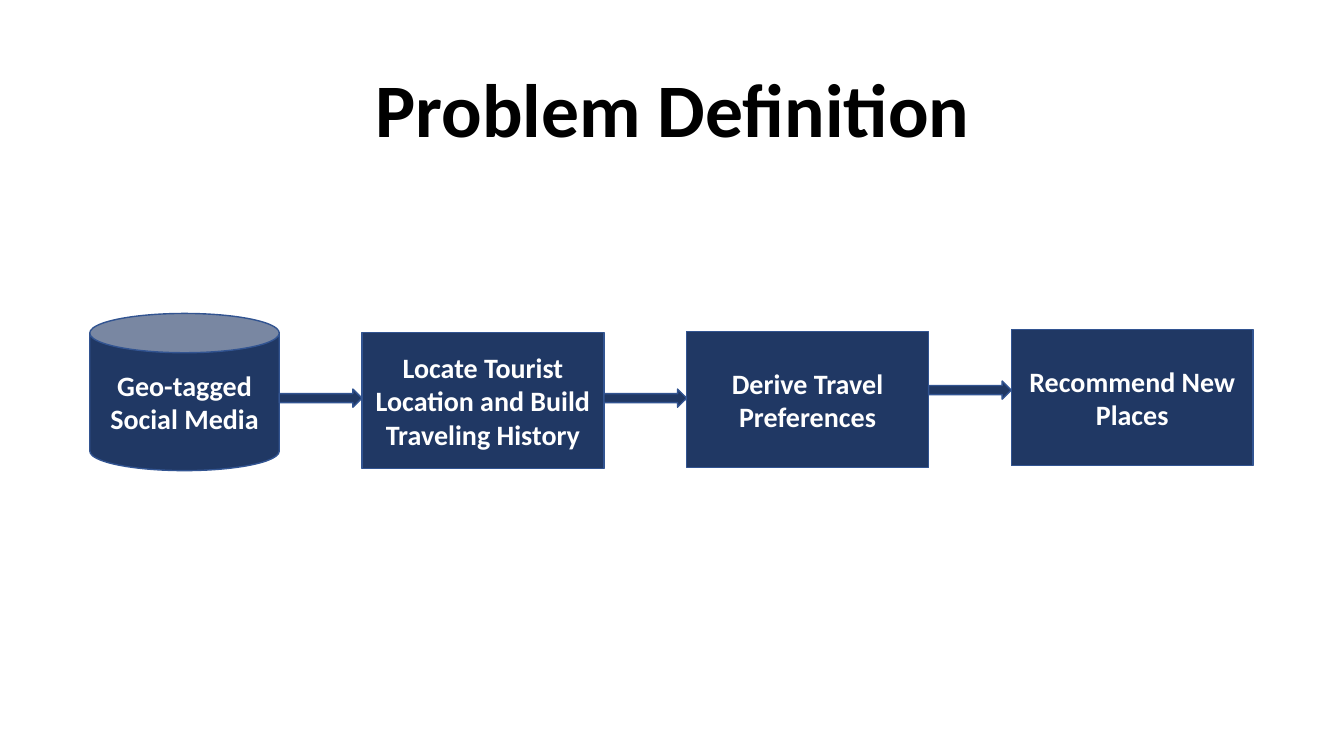
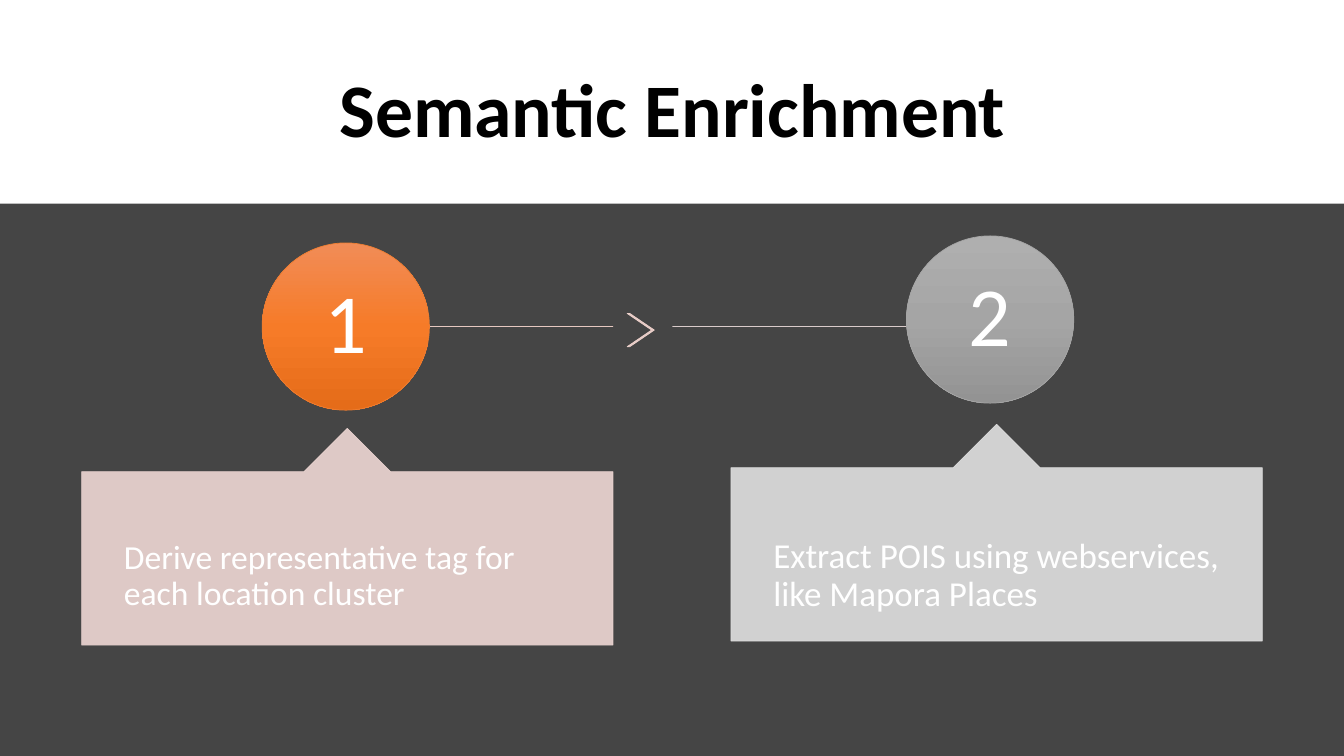
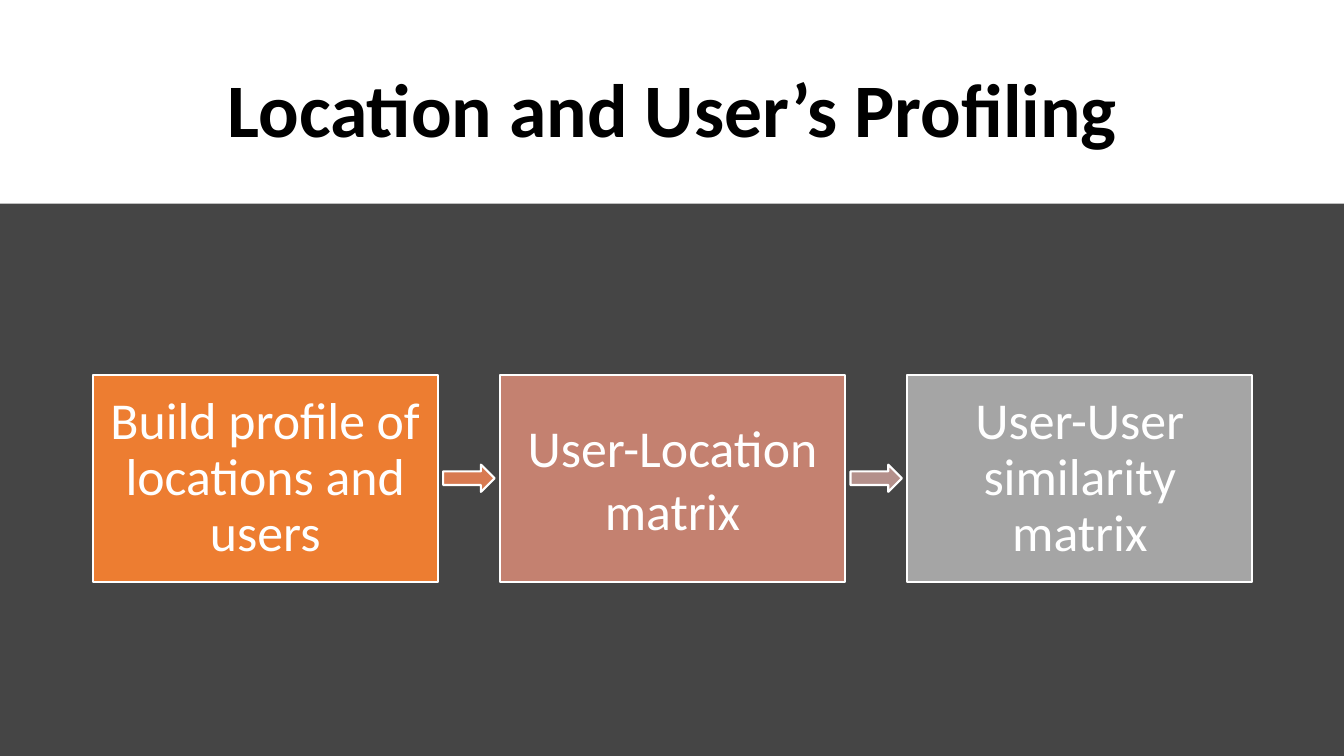
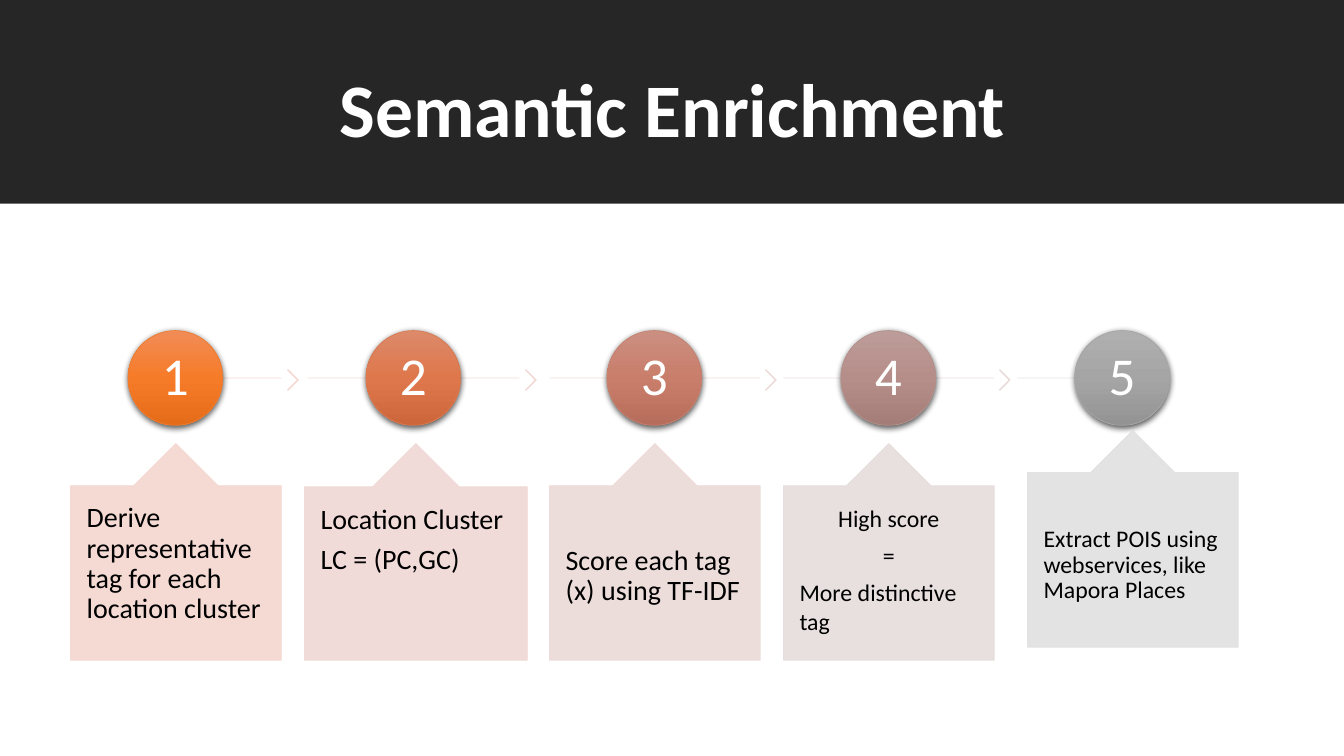
import copy
from dataclasses import dataclass

import pptx
import pptx.dml.color
import pptx.enum.shapes
import pptx.enum.text
import pptx.oxml
import pptx.oxml.ns
import pptx.util
from lxml import etree

Inches = pptx.util.Inches
Pt = pptx.util.Pt
RGB = pptx.dml.color.RGBColor.from_string
SHAPE = pptx.enum.shapes.MSO_SHAPE
ALIGN = pptx.enum.text.PP_ALIGN
ANCHOR = pptx.enum.text.MSO_ANCHOR
qn = pptx.oxml.ns.qn


@dataclass(frozen=True)
class Theme:
    font: str = "Calibri"
    white: str = "FFFFFF"
    black: str = "000000"
    dark: str = "454545"
    band: str = "262626"
    navy: str = "203864"
    navy_line: str = "325491"
    title_size: int = 54
    flow_size: int = 20
    matrix_size: int = 37
    step_alpha: int = 90


T = Theme()

BALLS = {
    "orange": ("ED7D31", ("F18C57", "F67B28", "E56C19")),
    "rust": ("D87A51", ("DD8A6A", "DE774B", "CD673B")),
    "rose": ("C48170", ("CB8F81", "C97E6B", "B76D5B")),
    "mauve": ("B4908B", ("BC9C99", "B68E89", "A47C78")),
    "grey": ("A5A5A5", ("AFAFAF", "A5A5A5", "939393")),
}

FLOW = [
    ("Geo-tagged Social Media", SHAPE.CAN, (0.89, 3.11, 1.88, 1.56), None),
    ("Locate Tourist Location and Build Traveling History", SHAPE.RECTANGLE,
     (3.59, 3.3, 2.4, 1.35), 3.86),
    ("Derive Travel Preferences", SHAPE.RECTANGLE, (6.81, 3.29, 2.4, 1.35), 3.86),
    ("Recommend New Places", SHAPE.RECTANGLE, (10.03, 3.27, 2.4, 1.35), 3.78),
]

MATRICES = [
    ("Build profile of locations and users", "ED7D31", 0.9, "D87A51"),
    ("User-Location matrix", "C48170", 1.0, "B4908B"),
    ("User-User similarity matrix", "A5A5A5", 0.9, None),
]

TAG_TEXT = "Derive representative tag for each location cluster"
POI_TEXT = "Extract POIS using webservices, like Mapora Places"

TWO_STEPS = {
    "ball": 1.66, "number_size": 60, "side": 0.42, "color": T.white,
    "shadow": False, "line_y": 3.24, "chevron": (3.11, 0.27, 0.33),
    "lines": [(3.74, 6.08, "F8D7CE"), (6.67, 9.31, "EADAD9")],
    "chevrons": [(6.22, "F4D7D1")],
    "steps": [
        {"hue": "orange", "ball": (2.6, 2.41), "box": (0.81, 4.25, 5.27),
         "fill": "EFD8D5", "size": 24, "top": 0.68, "text": [TAG_TEXT]},
        {"hue": "grey", "ball": (8.99, 2.34), "box": (7.25, 4.21, 5.27),
         "fill": "E1E1E1", "size": 25, "top": 0.7, "text": [POI_TEXT]},
    ],
}

FIVE_STEPS = {
    "ball": 0.94, "number_size": 38, "side": 0.16, "color": T.black,
    "shadow": True, "line_y": 3.75, "chevron": (3.67, 0.11, 0.2),
    "lines": [(1.86, 2.79, "F8D7CE"), (3.05, 5.15, "F3D8D1"),
              (5.45, 7.54, "EED9D5"), (7.77, 9.86, "E9DBDA"),
              (10.09, 11.13, "E4DEDE")],
    "chevrons": [(2.85, "F6D7CF"), (5.21, "F2D8D3"),
                 (7.59, "EDD9D7"), (9.91, "E8DCDB")],
    "steps": [
        {"hue": "orange", "ball": (1.27, 3.28), "box": (0.7, 4.4, 2.09),
         "fill": "F5D7D0", "size": 20, "top": 0.18, "text": [TAG_TEXT]},
        {"hue": "rust", "ball": (3.63, 3.28), "box": (3.02, 4.4, 2.21),
         "fill": "F0D8D4", "size": 20, "top": 0.18,
         "text": ["Location Cluster", "LC = (PC,GC)"]},
        {"hue": "rose", "ball": (6.02, 3.28), "box": (5.45, 4.4, 2.09),
         "fill": "EBDAD8", "size": 20, "top": 0.6,
         "text": ["Score each tag (x) using TF-IDF"]},
        {"hue": "mauve", "ball": (8.34, 3.28), "box": (7.77, 4.4, 2.09),
         "fill": "E6DDDC", "size": 17, "top": 0.18, "spacing": 1.0, "centered": 2,
         "text": ["High score", "=", "More distinctive tag"]},
        {"hue": "grey", "ball": (10.66, 3.28), "box": (10.19, 4.27, 2.09),
         "fill": "E1E1E1", "size": 17, "top": 0.54, "text": [POI_TEXT]},
    ],
}


def set_alpha(el, percent):
    for clr in el.iter(qn("a:srgbClr")):
        etree.SubElement(clr, qn("a:alpha"), val=str(percent * 1000))


def add_shape(s, kind, box, fill=None, line=None, weight=1, alpha=None, adj=()):
    sp = s.shapes.add_shape(kind, *map(Inches, box))
    sp.shadow.inherit = False
    for i, value in enumerate(adj):
        sp.adjustments[i] = value
    if fill:
        sp.fill.solid()
        sp.fill.fore_color.rgb = RGB(fill)
    if line:
        sp.line.color.rgb = RGB(line)
        sp.line.width = Pt(weight)
    else:
        sp.line.fill.background()
    if alpha:
        set_alpha(sp._element.spPr, alpha)
    return sp


def write(sp, paragraphs, size, color, bold=False, spacing=1.0, centered=None,
          anchor=ANCHOR.MIDDLE, insets=(0.1, 0.05, 0.1, 0.05)):
    tf = sp.text_frame
    tf.word_wrap = True
    tf.vertical_anchor = anchor
    tf.margin_left, tf.margin_top, tf.margin_right, tf.margin_bottom = map(Inches, insets)
    if centered is None:
        centered = len(paragraphs)
    for i, text in enumerate(paragraphs):
        p = tf.add_paragraph() if i else tf.paragraphs[0]
        p.alignment = ALIGN.CENTER if i < centered else ALIGN.LEFT
        p.line_spacing = spacing
        if i < len(paragraphs) - 1:
            p.space_after = Pt(round(size * 0.35))
        r = p.add_run()
        r.text = text
        r.font.name = T.font
        r.font.size = Pt(size)
        r.font.bold = bold
        r.font.color.rgb = RGB(color)


def add_slide(prs, title, background, band=None, color=T.black):
    s = prs.slides.add_slide(prs.slide_layouts[6])
    s.background.fill.solid()
    s.background.fill.fore_color.rgb = RGB(background)
    if band:
        add_shape(s, SHAPE.RECTANGLE, (0, 0, 13.33, 2.02), band)
    box = s.shapes.add_textbox(*map(Inches, (0.92, 0.4, 11.5, 1.45)))
    write(box, [title], T.title_size, color, bold=True, spacing=0.9)
    return s


def add_flow(s):
    gap = 0.82
    for text, kind, box, arrow_y in FLOW:
        sp = add_shape(s, kind, box, T.navy, T.navy_line)
        write(sp, [text], T.flow_size, T.white, bold=True)
        if arrow_y:
            add_shape(s, SHAPE.RIGHT_ARROW, (box[0] - gap, arrow_y, gap, 0.18),
                      T.navy, T.navy_line)


def add_matrices(s):
    left, top, width, height, gap = 0.92, 3.72, 3.42, 2.05, 0.62
    arrow_w, arrow_h = 0.51, 0.27
    for i, (text, fill, spacing, arrow) in enumerate(MATRICES):
        x = left + i * (width + gap)
        sp = add_shape(s, SHAPE.RECTANGLE, (x, top, width, height), fill, T.white, 1.5)
        write(sp, [text], T.matrix_size, T.white, spacing=spacing, insets=(0.17,) * 4)
        if arrow:
            add_shape(s, SHAPE.RIGHT_ARROW,
                      (x + width + (gap - arrow_w) / 2, top + (height - arrow_h) / 2,
                       arrow_w, arrow_h), arrow, T.white, 1.5)


def add_line(s, x1, x2, y, color):
    ln = s.shapes.add_connector(pptx.enum.shapes.MSO_CONNECTOR.STRAIGHT,
                                Inches(x1), Inches(y), Inches(x2), Inches(y))
    ln.line.color.rgb = RGB(color)
    ln.line.width = Pt(0.5)
    set_alpha(ln._element.spPr, T.step_alpha)
    etree.SubElement(ln._element.spPr, qn("a:effectLst"))


def add_ball(s, x, y, size, hue, shadow):
    edge, colors = BALLS[hue]
    sp = add_shape(s, SHAPE.OVAL, (x, y, size, size), line=edge, weight=0.5)
    sp.fill.gradient()
    sp.fill.gradient_angle = 270
    stops = sp._element.spPr.find(".//" + qn("a:gsLst"))
    stops.append(copy.deepcopy(stops[0]))
    for i, (stop, color) in enumerate(zip(sp.fill.gradient_stops, colors)):
        stop.position = i / 2
        stop.color.rgb = RGB(color)
    if shadow:
        effects = sp._element.spPr.find(qn("a:effectLst"))
        outer = etree.SubElement(effects, qn("a:outerShdw"), blurRad=str(Pt(4.5)),
                                 dist=str(Pt(1.5)), dir="5400000", rotWithShape="0")
        etree.SubElement(outer, qn("a:srgbClr"), val=T.black)
        set_alpha(outer, 63)
    return sp


def add_steps(s, plan):
    for x1, x2, color in plan["lines"]:
        add_line(s, x1, x2, plan["line_y"], color)
    y, width, height = plan["chevron"]
    for x, color in plan["chevrons"]:
        add_shape(s, SHAPE.CHEVRON, (x, y, width, height), color, color, 0.5,
                  T.step_alpha, (0.9,))
    for number, step in enumerate(plan["steps"], 1):
        ball = add_ball(s, *step["ball"], plan["ball"], step["hue"], plan["shadow"])
        write(ball, [str(number)], plan["number_size"], T.white, spacing=0.9,
              insets=(0,) * 4)
        callout = add_shape(s, SHAPE.UP_ARROW_CALLOUT, (*step["box"], 2.15), step["fill"],
                            step["fill"], 0.5, T.step_alpha, (0.5, 0.2, 0.2, 1))
        write(callout, step["text"], step["size"], plan["color"],
              spacing=step.get("spacing", 0.9), centered=step.get("centered", 0),
              anchor=ANCHOR.TOP, insets=(plan["side"], step["top"], plan["side"], 0.18))


def main():
    prs = pptx.Presentation()
    prs.slide_width = Inches(13.33)
    prs.slide_height = Inches(7.5)
    add_flow(add_slide(prs, "Problem Definition", T.white))
    add_steps(add_slide(prs, "Semantic Enrichment", T.dark, T.white), TWO_STEPS)
    add_matrices(add_slide(prs, "Location and User’s Profiling", T.dark, T.white))
    add_steps(add_slide(prs, "Semantic Enrichment", T.white, T.band, T.white), FIVE_STEPS)
    prs.save("out.pptx")


if __name__ == "__main__":
    main()
